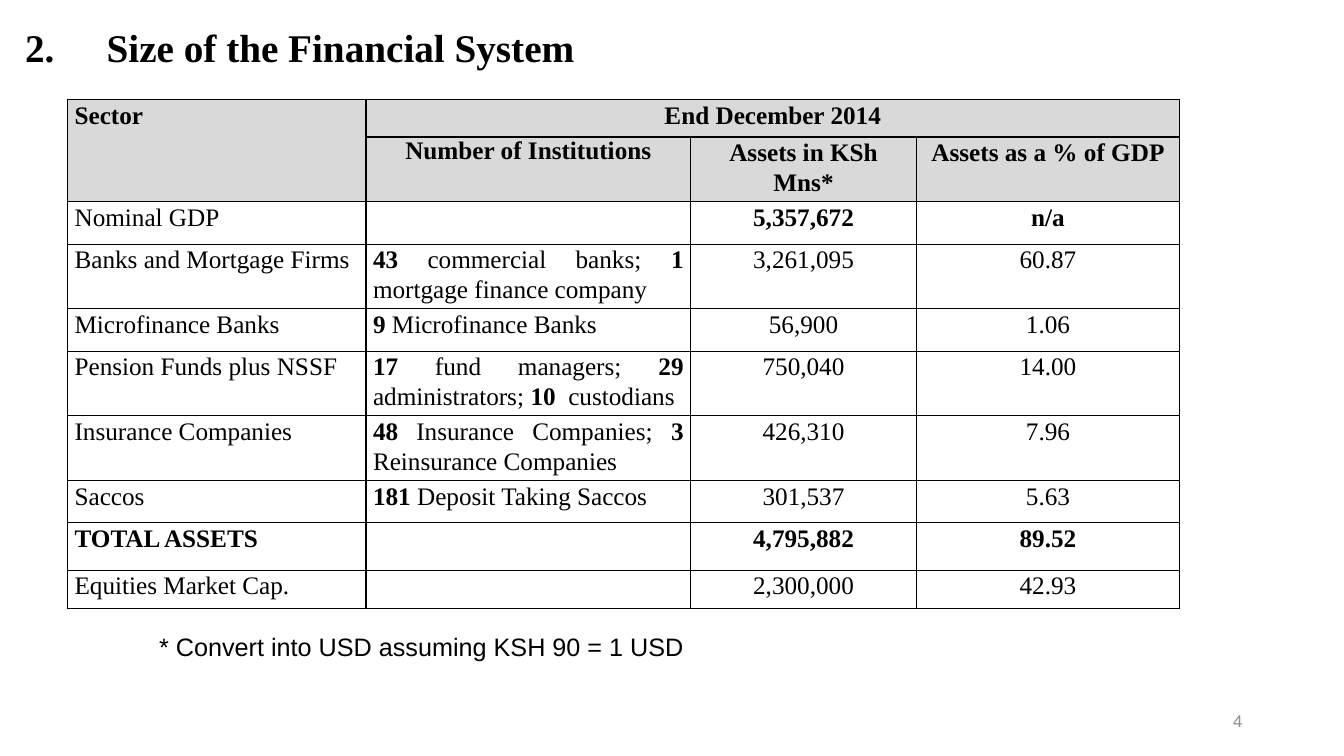
from dataclasses import dataclass

from lxml import etree
from pptx import Presentation
from pptx import util as u
from pptx.dml.color import RGBColor
from pptx.enum import text
from pptx.oxml import ns

LEFT, CENTER, RIGHT, JUSTIFY = (
    text.PP_ALIGN.LEFT, text.PP_ALIGN.CENTER, text.PP_ALIGN.RIGHT, text.PP_ALIGN.JUSTIFY)


@dataclass(frozen=True)
class Theme:
    ink: str = "000000"
    muted: str = "8C8C8C"
    header: str = "D9D9D9"
    serif: str = "Times New Roman"
    sans: str = "Arial"
    title: int = 28
    body: int = 18
    small: int = 12
    leading: float = 1.07
    border: int = 1


class SlideBuilder:
    """Draw themed elements on one slide, with lengths in px of a hundredth of an inch."""

    SCALE = 9144

    def __init__(self, deck, theme):
        self.theme = theme
        self.page = deck.slides.add_slide(deck.slide_layouts[6])

    def px(self, length):
        return u.Emu(length * self.SCALE)

    def fill_para(self, para, content, size, font, color, align=LEFT, leading=None, bold=False):
        for name, value in {"alignment": align, "line_spacing": leading}.items():
            setattr(para, name, value)
        for index, part in enumerate(content.split("|")):
            if not part:
                continue
            span = para.add_run()
            span.text = part
            style = {"name": font, "size": u.Pt(size), "bold": bold or index % 2 == 1}
            for name, value in style.items():
                setattr(span.font, name, value)
            span.font.color.rgb = RGBColor.from_string(color)

    def label(self, area, content, size, font, color, anchor=text.MSO_ANCHOR.TOP, **style):
        box = self.page.shapes.add_textbox(*map(self.px, area))
        for name, value in {"word_wrap": True, "vertical_anchor": anchor}.items():
            setattr(box.text_frame, name, value)
        para = box.text_frame.paragraphs[0]
        self.fill_para(para, content, size, font, color, **style)
        return para

    def number(self, para, start, indent):
        props = para._p.get_or_add_pPr()
        for name, value in {"marL": indent, "indent": -indent}.items():
            props.set(name, str(self.px(value)))
        etree.SubElement(props, ns.qn("a:buFont"), typeface="+mj-lt")
        etree.SubElement(props, ns.qn("a:buAutoNum"), type="arabicPeriod", startAt=str(start))

    def outline(self, cell):
        props = cell._tc.get_or_add_tcPr()
        for index, side in enumerate(("lnL", "lnR", "lnT", "lnB")):
            line = etree.Element(ns.qn(f"a:{side}"), w=str(u.Pt(self.theme.border)))
            fill = etree.SubElement(line, ns.qn("a:solidFill"))
            etree.SubElement(fill, ns.qn("a:srgbClr"), val=self.theme.ink)
            props.insert(index, line)

    def cell(self, cell, content, shaded, **style):
        theme = self.theme
        margins = {"margin_left": 7, "margin_right": 7, "margin_top": 0, "margin_bottom": 0}
        for name, value in margins.items():
            setattr(cell, name, self.px(value))
        if shaded:
            cell.fill.solid()
            cell.fill.fore_color.rgb = RGBColor.from_string(theme.header)
        else:
            cell.fill.background()
        self.outline(cell)
        self.fill_para(cell.text_frame.paragraphs[0], content, theme.body, theme.serif,
                       theme.ink, **style)

    def table(self, left, top, widths, heights, rows, header_rows, merges):
        area = (left, top, sum(widths), sum(heights))
        grid = self.page.shapes.add_table(len(rows), len(widths), *map(self.px, area)).table
        for name in ("first_row", "horz_banding"):
            setattr(grid, name, False)
        for column, width in zip(grid.columns, widths):
            column.width = self.px(width)
        for row, height in zip(grid.rows, heights):
            row.height = self.px(height)
        for r, row in enumerate(rows):
            header = r < header_rows
            for c, content in enumerate(row):
                if header:
                    align = CENTER if c else LEFT
                else:
                    align = CENTER if c > 1 else JUSTIFY
                leading = 1.0 if (r, c) == (1, 1) else self.theme.leading
                self.cell(grid.cell(r, c), content, header, align=align,
                          leading=leading, bold=header)
        for first, last in merges:
            grid.cell(*first).merge(grid.cell(*last))


SECTORS = [
    ("Sector", "End December 2014", "", ""),
    ("", "Number of Institutions", "Assets in KSh Mns*", "Assets as a % of GDP"),
    ("Nominal GDP", "", "|5,357,672|", "|n/a|"),
    ("Banks and Mortgage Firms",
     "|43| commercial banks; |1| mortgage finance company", "3,261,095", "60.87"),
    ("Microfinance Banks", "|9| Microfinance Banks", "56,900", "1.06"),
    ("Pension Funds plus NSSF",
     "|17| fund managers; |29| administrators; |10|  custodians", "750,040", "14.00"),
    ("Insurance Companies",
     "|48| Insurance Companies; |3| Reinsurance Companies", "426,310", "7.96"),
    ("Saccos", "|181| Deposit Taking Saccos", "301,537", "5.63"),
    ("|TOTAL ASSETS|", "", "|4,795,882|", "|89.52|"),
    ("Equities Market Cap.", "", "2,300,000", "42.93"),
]


def main():
    theme = Theme()
    deck = Presentation()
    deck.slide_width, deck.slide_height = u.Inches(13.33), u.Inches(7.5)
    slide = SlideBuilder(deck, theme)
    middle = text.MSO_ANCHOR.MIDDLE

    title = slide.label((15, 13, 1305, 73), "Size of the Financial System", theme.title,
                        theme.serif, theme.ink, anchor=middle, leading=0.9, bold=True)
    slide.number(title, start=2, indent=81)
    slide.label((942, 695, 300, 40), "4", theme.small, theme.sans, theme.muted,
                anchor=middle, align=RIGHT)
    slide.table(67, 99, widths=[296, 322, 224, 261],
                heights=[37, 38] + [42] * 6 + [47, 38], rows=SECTORS, header_rows=2,
                merges=[((0, 0), (1, 0)), ((0, 1), (0, 3))])
    slide.label((148, 621, 770, 40), "* Convert into USD assuming KSH 90 = 1 USD",
                theme.body, theme.sans, theme.ink)
    deck.save("out.pptx")


if __name__ == "__main__":
    main()
